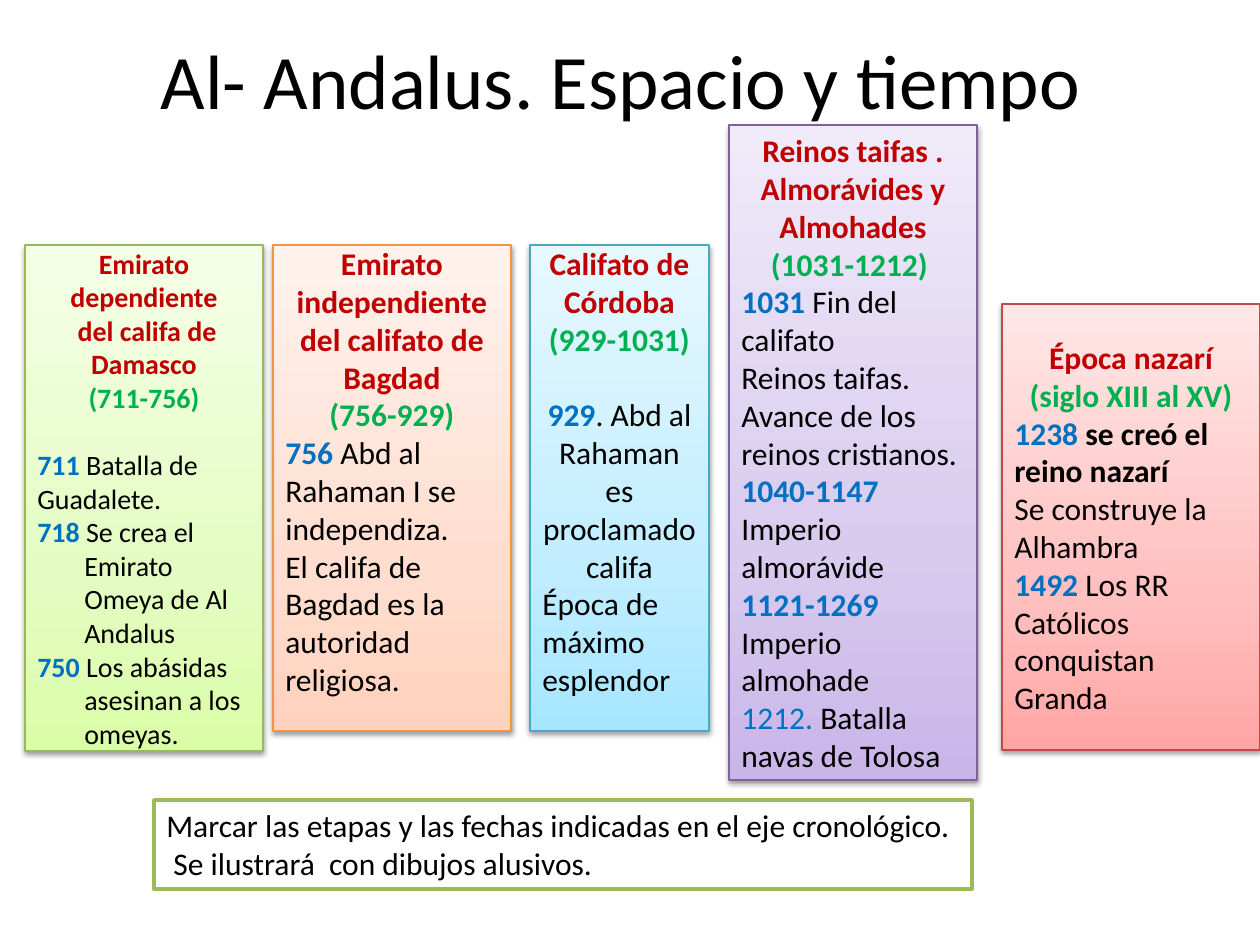
"""Build the slide on the stages of Al-Andalus."""
from copy import deepcopy
from typing import NamedTuple

from lxml import etree
from pptx import Presentation
from pptx.dml.color import RGBColor
from pptx.enum.shapes import MSO_SHAPE
from pptx.enum.text import MSO_ANCHOR, PP_ALIGN
from pptx.oxml.ns import qn
from pptx.util import Emu, Pt

RECTANGLE = MSO_SHAPE.RECTANGLE
MIDDLE = MSO_ANCHOR.MIDDLE
CENTER, LEFT = PP_ALIGN.CENTER, PP_ALIGN.LEFT
PX_PER_INCH = 126
FONT = "Calibri"
BLACK = "000000"


class Style(NamedTuple):
    """Colour and weight of a piece of text."""
    color: str
    bold: bool


HEADING = Style("C00000", True)
PERIOD = Style("00B050", True)
YEAR = Style("0070C0", True)
LIGHT_YEAR = Style("0070C0", False)
BODY = Style(BLACK, False)
STRONG = Style(BLACK, True)


class Line(NamedTuple):
    """One paragraph of styled pieces."""
    pieces: list[tuple[str, Style]]
    align: PP_ALIGN = LEFT
    hanging: int = 0
    gap: bool = False


class Stage(NamedTuple):
    """One period card, with lengths in px."""
    left: int
    top: int
    width: int
    height: int
    border: str
    gradient: tuple[str, str, str]
    lines: list[Line]
    size: int = 18
    bottom_inset: int = 0


STAGES = [
    Stage(25, 245, 238, 506, "98B955", ("DAFDA7", "E4FCC2", "F5FFE7"), [
        Line([("Emirato dependiente", HEADING)], CENTER),
        Line([(" del califa de Damasco", HEADING)], CENTER),
        Line([("(711-756)", PERIOD)], CENTER),
        Line([("711", YEAR), (" Batalla de Guadalete.", BODY)], gap=True),
        Line([("718 ", YEAR), ("Se crea el  Emirato  Omeya de Al Andalus", BODY)], hanging=47),
        Line([("750 ", YEAR), ("Los abásidas asesinan a los omeyas.", BODY)], hanging=47),
    ], size=16),
    Stage(273, 245, 238, 486, "F69240", ("FFD2BD", "FFDED0", "FFF2ED"), [
        Line([("Emirato independiente del califato de Bagdad", HEADING)], CENTER),
        Line([("(756-929)", PERIOD)], CENTER),
        Line([("756 ", YEAR), ("Abd al Rahaman I se independiza.", BODY)]),
        Line([("El califa de Bagdad es la autoridad religiosa.", BODY)]),
    ], bottom_inset=34),
    Stage(530, 245, 179, 486, "46AAC5", ("A7E6FF", "C1EDFF", "E7F8FF"), [
        Line([("Califato de Córdoba", HEADING)], CENTER),
        Line([("(929-1031)", PERIOD)], CENTER),
        Line([("929", YEAR), (". Abd al Rahaman es proclamado califa", BODY)], CENTER, gap=True),
        Line([("Época de máximo esplendor", BODY)]),
    ], bottom_inset=34),
    Stage(729, 125, 248, 655, "7D60A0", ("C9B5E8", "D8CBEE", "F0EAF9"), [
        Line([("Reinos taifas . Almorávides y Almohades ", HEADING), ("(1031-1212) ", PERIOD)], CENTER),
        Line([("1031", YEAR), (" Fin del califato", BODY)]),
        Line([("Reinos taifas.", BODY)]),
        Line([("Avance de los reinos cristianos.", BODY)]),
        Line([("1040-1147", YEAR)]),
        Line([("Imperio almorávide", BODY)]),
        Line([("1121-1269", YEAR)]),
        Line([("Imperio almohade", BODY)]),
        Line([("1212. ", LIGHT_YEAR), ("Batalla navas de Tolosa", BODY)]),
    ]),
    Stage(1002, 304, 258, 446, "BF4C48", ("FFA6A5", "FFC0BF", "FFE7E7"), [
        Line([("Época nazarí ", HEADING), ("(siglo XIII al XV)", PERIOD)], CENTER),
        Line([("1238 ", YEAR), ("se creó el reino nazarí", STRONG)]),
        Line([("Se construye la Alhambra", BODY)]),
        Line([("1492 ", YEAR), ("Los RR Católicos conquistan Granda", BODY)]),
    ]),
]
TASK = [
    Line([("Marcar las etapas y las fechas indicadas en el eje cronológico.", BODY)]),
    Line([(" Se ilustrará  con dibujos alusivos.", BODY)]),
]


def px(length: int) -> Emu:
    """Turn px into EMU."""
    return Emu(round(length * 914400 / PX_PER_INCH))


def rgb(value: str) -> RGBColor:
    """Turn a hex string into a colour."""
    return RGBColor.from_string(value)


def write_lines(frame, lines: list[Line], size: int) -> None:
    """Fill a text frame with styled paragraphs."""
    for index, line in enumerate(lines):
        paragraph = frame.add_paragraph() if index else frame.paragraphs[0]
        paragraph.alignment = line.align
        if line.gap:
            paragraph.space_before = Pt(round(size * 1.2, 1))
        if line.hanging:
            properties = paragraph._p.get_or_add_pPr()
            properties.set("marL", str(px(line.hanging)))
            properties.set("indent", str(-px(line.hanging)))
        for text, style in line.pieces:
            run = paragraph.add_run()
            run.text = text
            run.font.name = FONT
            run.font.size = Pt(size)
            run.font.bold = style.bold
            run.font.color.rgb = rgb(style.color)


def fill_gradient(shape, colors: tuple[str, str, str]) -> None:
    """Blend three colours upwards from the bottom edge."""
    shape.fill.gradient()
    shape.fill.gradient_angle = 90
    stop_list = shape._element.spPr.find(".//" + qn("a:gsLst"))
    stop_list.append(deepcopy(stop_list[-1]))
    for stop, position, color in zip(shape.fill.gradient_stops, (0, 0.35, 1), colors):
        stop.position = position
        stop.color.rgb = rgb(color)


def add_shadow(shape) -> None:
    """Cast a soft shadow downwards."""
    shape.shadow.inherit = False
    effects = shape._element.spPr.find(qn("a:effectLst"))
    shadow = etree.SubElement(effects, qn("a:outerShdw"), blurRad="40000", dist="20000",
                              dir="5400000", rotWithShape="0")
    color = etree.SubElement(shadow, qn("a:srgbClr"), val=BLACK)
    etree.SubElement(color, qn("a:alpha"), val="38000")


def draw_stage(slide, stage: Stage) -> None:
    """Draw one period card."""
    card = slide.shapes.add_shape(RECTANGLE, px(stage.left), px(stage.top),
                                  px(stage.width), px(stage.height))
    fill_gradient(card, stage.gradient)
    card.line.color.rgb = rgb(stage.border)
    card.line.width = Pt(0.75)
    add_shadow(card)
    frame = card.text_frame
    frame.word_wrap = True
    frame.vertical_anchor = MIDDLE
    frame.margin_top = 0
    frame.margin_bottom = px(stage.bottom_inset)
    write_lines(frame, stage.lines, stage.size)


def draw_title(slide) -> None:
    """Place and format the slide title."""
    title = slide.shapes.title
    title.left, title.top, title.width, title.height = px(54), px(0), px(1134), px(158)
    title.text_frame.text = "Al- Andalus. Espacio y tiempo"
    title.text_frame.vertical_anchor = MIDDLE
    paragraph = title.text_frame.paragraphs[0]
    paragraph.alignment = CENTER
    font = paragraph.runs[0].font
    font.name = FONT
    font.size = Pt(44)
    font.color.rgb = rgb(BLACK)


def draw_task(slide) -> None:
    """Draw the framed task below the cards."""
    task = slide.shapes.add_textbox(px(154), px(800), px(818), px(89))
    task.fill.solid()
    task.fill.fore_color.rgb = rgb("FFFFFF")
    task.line.color.rgb = rgb("9BBB59")
    task.line.width = Pt(2)
    task.text_frame.word_wrap = False
    write_lines(task.text_frame, TASK, 18)


def main() -> None:
    """Build and save the presentation."""
    presentation = Presentation()
    presentation.slide_width, presentation.slide_height = px(1260), px(945)
    slide = presentation.slides.add_slide(presentation.slide_layouts[5])
    draw_title(slide)
    for stage in STAGES:
        draw_stage(slide, stage)
    draw_task(slide)
    presentation.save("out.pptx")


if __name__ == "__main__":
    main()
